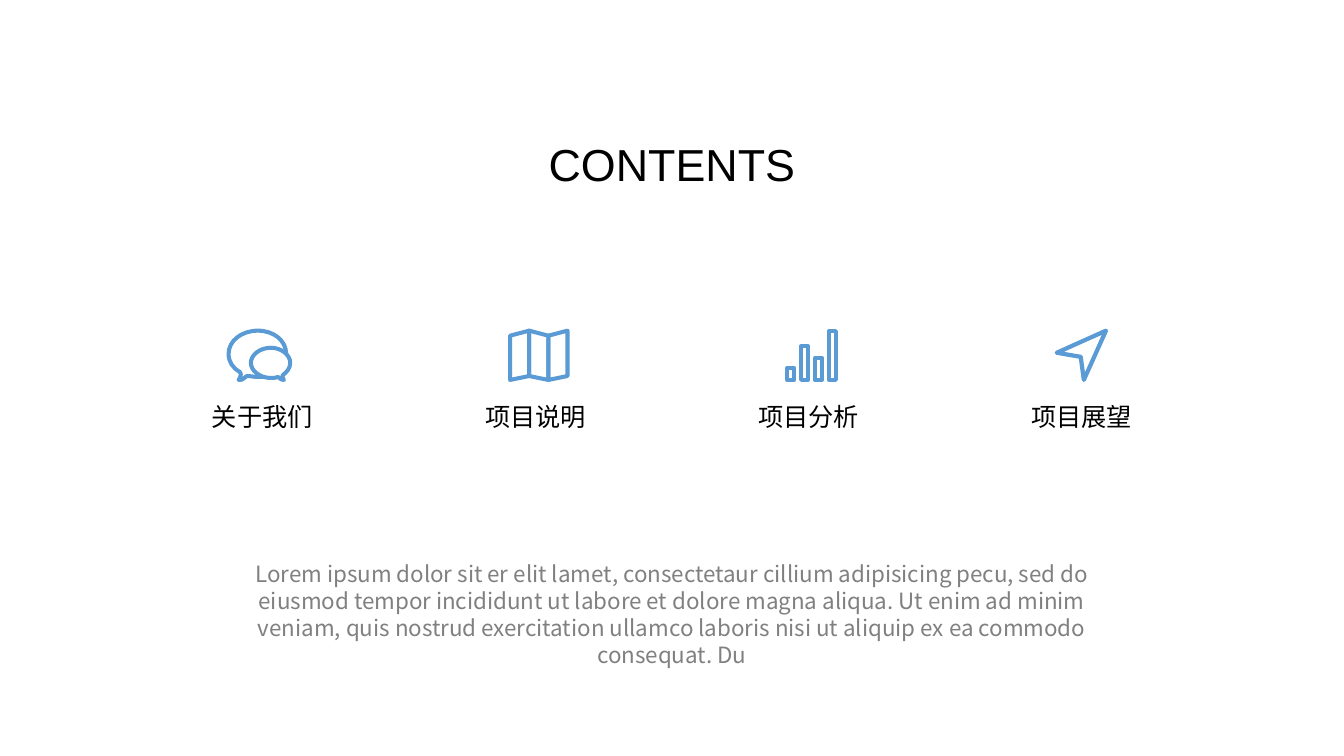
from lxml.etree import SubElement
from pptx import Presentation
from pptx.dml.color import RGBColor
from pptx.enum.shapes import MSO_SHAPE as Preset
from pptx.enum.text import MSO_ANCHOR as Anchor, MSO_AUTO_SIZE as AutoSize, PP_ALIGN as Align
from pptx.oxml.ns import qn
from pptx.util import Pt

COLORS = {"icon": "5B9BD5", "text": "000000", "muted": "808080"}
LATIN, CHINESE = "Arial", "Noto Sans CJK SC"
LABELS = ["关于我们", "项目说明", "项目分析", "项目展望"]
LABEL_LEFT, LABEL_WIDTH, COLUMN_STEP = 143.8, 87.2, 195.1
ICON_TOP, ICON_BOTTOM = 236, 35.4
LOREM = (
    "Lorem ipsum dolor sit er elit lamet, consectetaur cillium adipisicing pecu, "
    "sed do eiusmod tempor incididunt ut labore et dolore magna aliqua. Ut enim ad "
    "minim veniam, quis nostrud exercitation ullamco laboris nisi ut aliquip ex ea "
    "commodo consequat. Du"
)
LARGE_BUBBLE = [
    (0.4, 33.3),
    (-1, 33.3), (-2.5, 33.3), (-3.2, 33.3),
    (-5.3, 33.3), (-8.9, 32.6), (-10.4, 32.6),
    (-11.8, 31.8), (-13.3, 36.2), (-16.9, 35.4),
    (-16.9, 35.4), (-14, 31.1), (-16.1, 29.7),
    (-21.2, 26.8), (-24.1, 22.5), (-24.1, 16.7),
    (-24.1, 7.4), (-14.7, 0.2), (-3.2, 0.2),
    (8.3, 0.2), (17, 7.4), (17, 16.7),
]
SMALL_BUBBLE = [
    (-8.2, 23.2),
    (-8.2, 29), (-1.7, 34), (6.2, 34),
    (7.6, 34), (9.8, 34), (11.2, 33.3),
    (11.9, 33.3), (12.7, 35.4), (15.5, 35.4),
    (15.5, 35.4), (13.4, 32.6), (14.8, 31.8),
    (17.7, 29.7), (19.9, 26.8), (19.9, 23.2),
    (19.9, 17.4), (13.4, 12.4), (6.2, 12.4),
    (-1.7, 12.4), (-8.2, 17.4), (-8.2, 23.2),
]
POINTER = [(1.5, 35.4), (17.3, 0.2), (-17.9, 16), (-0.7, 18.9)]


def write_text(shape, text, size, color="text", font=LATIN, spacing=1.0,
               wrap=True, anchor=Anchor.TOP):
    frame = shape.text_frame
    frame.auto_size = AutoSize.NONE
    frame.word_wrap = wrap
    frame.vertical_anchor = anchor
    paragraph = frame.paragraphs[0]
    paragraph.alignment = Align.CENTER
    paragraph.line_spacing = spacing
    paragraph.space_before = Pt(0)
    run = paragraph.add_run()
    run.text = text
    run.font.name = font
    run.font.size = Pt(size)
    run.font.color.rgb = RGBColor.from_string(COLORS[color])
    SubElement(run.font._element, qn("a:ea")).set("typeface", CHINESE)


class SlideBuilder:
    def __init__(self, slide, line_width=2.88):
        self.slide = slide
        self.line_width = line_width

    def placeholder(self, index, text, box, **style):
        shape = self.slide.placeholders[index]
        shape.left, shape.top, shape.width, shape.height = map(Pt, box)
        write_text(shape, text, **style)

    def label(self, text, box, **style):
        write_text(self.slide.shapes.add_textbox(*map(Pt, box)), text, **style)

    def stroke(self, shape, width=None):
        shape.shadow.inherit = False
        shape.fill.background()
        shape.line.color.rgb = RGBColor.from_string(COLORS["icon"])
        shape.line.width = Pt(width or self.line_width)
        SubElement(shape.line._ln, qn("a:round"))

    def outline(self, center, points, closed=True, width=None):
        placed = [(Pt(center + x), Pt(ICON_TOP + y)) for x, y in points]
        builder = self.slide.shapes.build_freeform(*placed[0], scale=1.0)
        builder.add_line_segments(placed[1:], close=closed)
        shape = builder.convert_to_shape()
        self.stroke(shape, width)
        return shape

    def curve(self, center, controls, closed=True):
        shape = self.outline(center, controls[::3], closed)
        segments = list(shape._element.iter(qn("a:lnTo")))
        for index, segment in enumerate(segments):
            segment.tag = qn("a:cubicBezTo")
            segment.clear()
            for x, y in controls[3 * index + 1:3 * index + 4]:
                point = SubElement(segment, qn("a:pt"))
                point.set("x", str(Pt(center + x) - shape.left))
                point.set("y", str(Pt(ICON_TOP + y) - shape.top))

    def rectangle(self, left, top, width, height):
        box = map(Pt, (left, top, width, height))
        self.stroke(self.slide.shapes.add_shape(Preset.RECTANGLE, *box))


def draw_bubbles(builder, center):
    builder.curve(center, LARGE_BUBBLE, closed=False)
    builder.curve(center, SMALL_BUBBLE)


def draw_map(builder, center):
    folds = [(0.2, 32.6), (3.8, ICON_BOTTOM)]
    for panel in range(3):
        left = -18.2 + 13.7 * panel
        right = left + 13.7
        left_top, left_bottom = folds[(panel + 1) % 2]
        right_top, right_bottom = folds[panel % 2]
        builder.outline(center, [(left, left_top), (right, right_top),
                                 (right, right_bottom), (left, left_bottom)])


def draw_bars(builder, center):
    for index, height in enumerate([8.6, 24, 15.8, 34.9]):
        builder.rectangle(center - 15.2 + 9.9 * index,
                          ICON_TOP + ICON_BOTTOM - height, 5, height)


def draw_pointer(builder, center):
    builder.outline(center, POINTER, width=3)


presentation = Presentation()
presentation.slide_width, presentation.slide_height = Pt(960), Pt(540)
builder = SlideBuilder(presentation.slides.add_slide(presentation.slide_layouts[0]))

builder.placeholder(0, "CONTENTS", (384, 94.3, 192, 46), size=32)
for index, (text, draw_icon) in enumerate(
        zip(LABELS, [draw_bubbles, draw_map, draw_bars, draw_pointer])):
    left = LABEL_LEFT + COLUMN_STEP * index
    draw_icon(builder, left + LABEL_WIDTH / 2)
    builder.label(text, (left, 283, LABEL_WIDTH, 29), size=18, wrap=False)
builder.placeholder(1, LOREM, (152, 396.5, 656, 65.5), size=16, color="muted",
                    font=CHINESE, spacing=Pt(19.2))

presentation.save("out.pptx")
